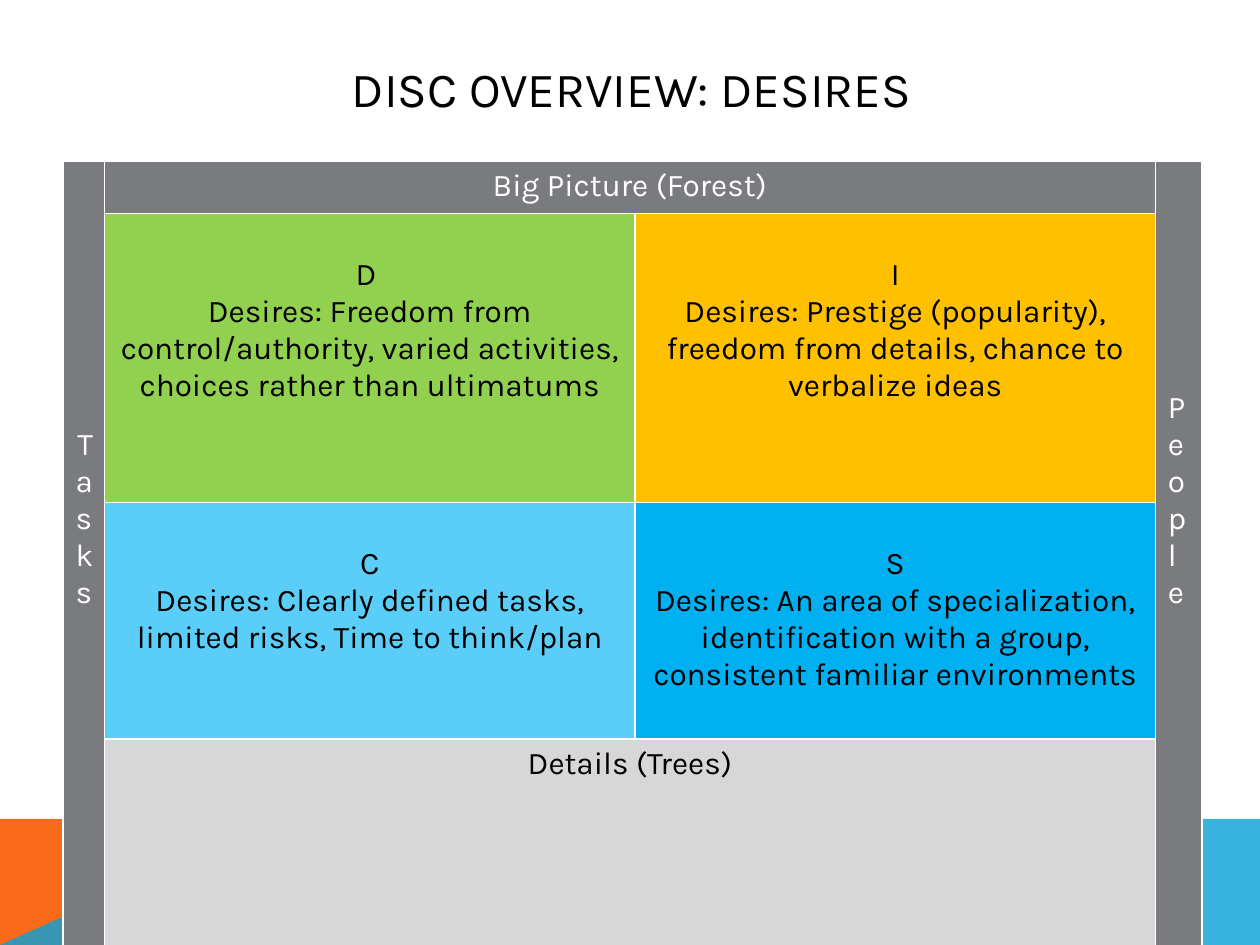
"""Build the DISC desires slide: a quadrant table framed by four axis labels."""
from dataclasses import dataclass

from lxml.etree import SubElement
from pptx import Presentation
from pptx.dml.color import RGBColor
from pptx.enum.text import MSO_ANCHOR as Anchor, PP_ALIGN as Align
from pptx.oxml.ns import qn
from pptx.util import Pt

FONT = "Karla"
BLACK, WHITE, GRAY = "000000", "FFFFFF", "797B7E"
LINE = 21.15
MARGIN = 3.6
COLS = (23.76, 303.12, 297.36, 26.64)
ROWS = (29.9, 165, 135.2, 117.7)


@dataclass
class Block:
    row: int
    col: int
    lines: tuple[str, ...]
    fill: str
    color: str = BLACK
    rows: int = 1
    cols: int = 1
    lead: int = 0
    align: Align = Align.CENTER


BLOCKS = (
    Block(0, 0, ("Tasks",), GRAY, WHITE, rows=4, lead=7),
    Block(0, 1, ("Big Picture (Forest)",), GRAY, WHITE, cols=2),
    Block(0, 3, ("People",), GRAY, WHITE, rows=4, lead=6, align=Align.LEFT),
    Block(1, 1, ("D ", "Desires: Freedom from control/authority, varied activities, "
                 "choices rather than ultimatums"), "92D050", lead=1),
    Block(1, 2, ("I", "Desires: Prestige (popularity), freedom from details, "
                 "chance to verbalize ideas"), "FFC000", lead=1),
    Block(2, 1, ("C", "Desires: Clearly defined tasks, limited risks, "
                 "Time to think/plan"), "5ACEF9", lead=1),
    Block(2, 2, ("S", "Desires: An area of specialization, identification with a group, "
                 "consistent familiar environments"), "00B0F0", lead=1),
    Block(3, 1, ("Details (Trees)",), "D7D7D8", cols=2),
)


def rgb(value: str) -> RGBColor:
    return RGBColor.from_string(value)


def write(tf, lines, *, size=18, color=BLACK, align=Align.CENTER) -> None:
    for i, line in enumerate(lines):
        p = tf.paragraphs[0] if i == 0 else tf.add_paragraph()
        p.alignment = align
        r = p.add_run()
        r.text = line
        r.font.name = FONT
        r.font.size = Pt(size)
        r.font.color.rgb = rgb(color)


def add_band(s, points, color: str, alpha: int = 100) -> None:
    corners = [(Pt(x), Pt(y)) for x, y in points]
    builder = s.shapes.build_freeform(*corners[0])
    builder.add_line_segments(corners[1:])
    sp = builder.convert_to_shape()
    sp.shadow.inherit = False
    sp.fill.solid()
    sp.fill.fore_color.rgb = rgb(color)
    sp.line.fill.background()
    if alpha < 100:
        clr = sp.fill._xPr.find(qn("a:solidFill"))[0]
        SubElement(clr, qn("a:alpha"), val=str(alpha * 1000))


def add_borders(cell) -> None:
    tc_pr = cell._tc.get_or_add_tcPr()
    for side in ("lnL", "lnR", "lnT", "lnB"):
        ln = SubElement(tc_pr, qn(f"a:{side}"), w=str(Pt(1)))
        fill = SubElement(ln, qn("a:solidFill"))
        SubElement(fill, qn("a:srgbClr"), val=WHITE)


def fill_block(table, block: Block) -> None:
    cell = table.cell(block.row, block.col)
    if block.rows * block.cols > 1:
        cell.merge(table.cell(block.row + block.rows - 1, block.col + block.cols - 1))
    cell.margin_top = Pt(MARGIN + block.lead * LINE)
    cell.fill.solid()
    cell.fill.fore_color.rgb = rgb(block.fill)
    write(cell.text_frame, block.lines, color=block.color, align=block.align)


def add_grid(s) -> None:
    frame = s.shapes.add_table(len(ROWS), len(COLS), Pt(36), Pt(92.2),
                               Pt(sum(COLS)), Pt(sum(ROWS)))
    table = frame.table
    table.first_row = table.horz_banding = False
    for column, width in zip(table.columns, COLS):
        column.width = Pt(width)
    for row, height in zip(table.rows, ROWS):
        row.height = Pt(height)
    for cell in table.iter_cells():
        add_borders(cell)
    for block in BLOCKS:
        fill_block(table, block)


def add_title(s, text: str) -> None:
    title = s.shapes.title
    title.left, title.top, title.width, title.height = Pt(64.8), Pt(28.8), Pt(592), Pt(43.2)
    tf = title.text_frame
    tf.word_wrap = True
    tf.vertical_anchor = Anchor.MIDDLE
    write(tf, (text,), size=28)


def main() -> None:
    prs = Presentation()
    prs.slide_width, prs.slide_height = Pt(720), Pt(540)
    s = prs.slides.add_slide(prs.slide_layouts[5])
    add_band(s, ((0, 540), (0, 468), (160.5, 468), (281.5, 540)), "F96A1B")
    add_band(s, ((0, 540), (160.5, 468), (720, 468), (720, 540)), "08A1D9", alpha=80)
    add_grid(s)
    add_title(s, "DISC OVERVIEW: DESIRES")
    prs.save("out.pptx")


if __name__ == "__main__":
    main()
